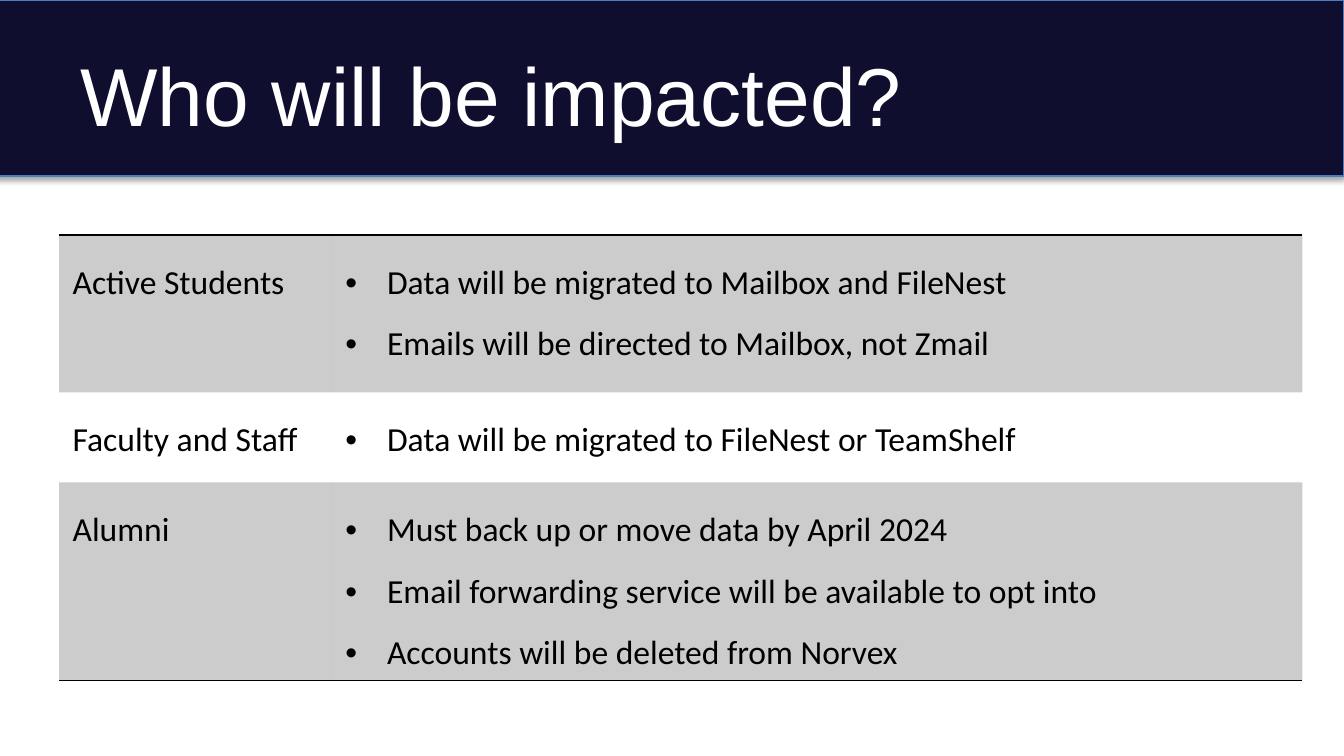
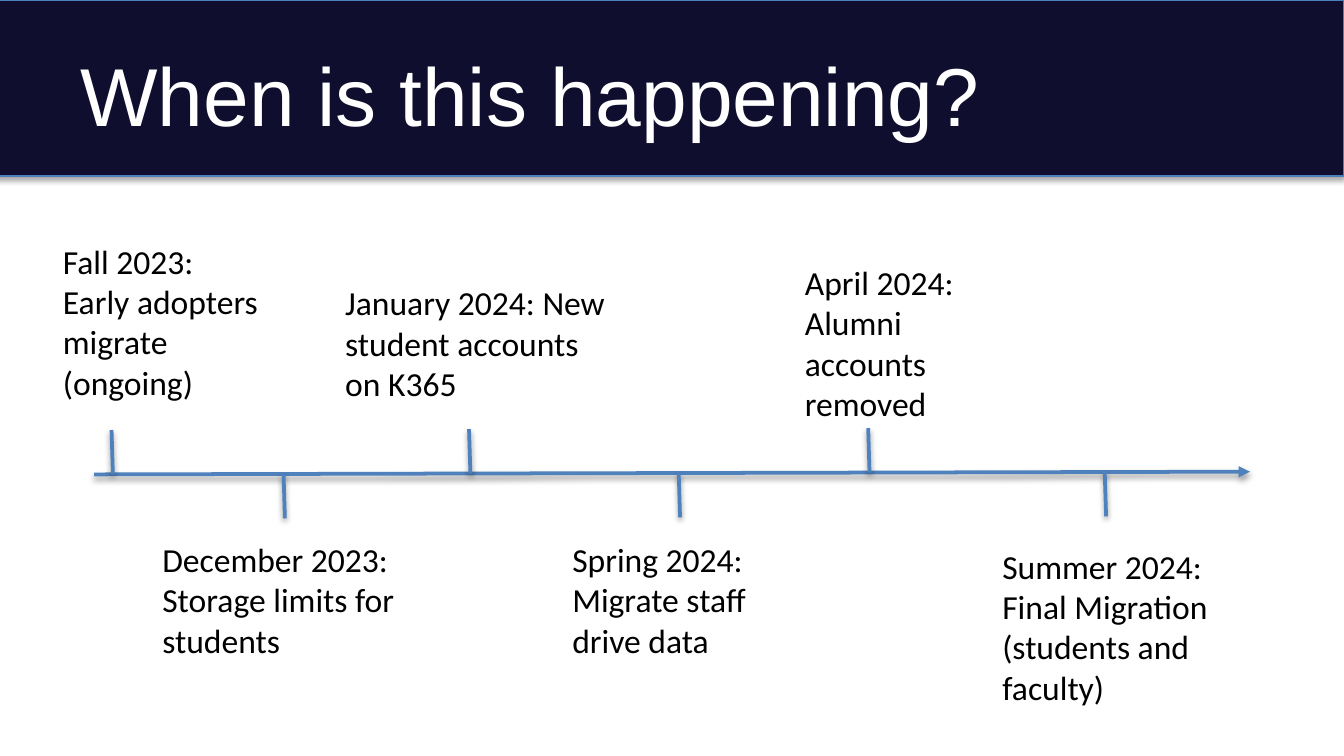
"""Build two slides on a mail and file migration: who is affected and when."""
from dataclasses import dataclass

from lxml.etree import SubElement
from pptx import Presentation
from pptx.dml.color import RGBColor
from pptx.enum.shapes import MSO_CONNECTOR, MSO_SHAPE
from pptx.enum.text import MSO_ANCHOR, MSO_AUTO_SIZE
from pptx.oxml.ns import qn
from pptx.util import Inches, Pt


@dataclass(frozen=True)
class Theme:
    band: str = "100E2F"
    band_line: str = "4B7EBC"
    axis: str = "4F81BD"
    ink: str = "000000"
    paper: str = "FFFFFF"
    title_font: str = "Arial"
    body_font: str = "Calibri"
    title_size: int = 44
    body_size: int = 18


T = Theme()
W = 10
H = W * 9 / 16

GROUPS = [
    ("Active Students", 1.17, ["Data will be migrated to Mailbox and FileNest",
                               "Emails will be directed to Mailbox, not Zmail"]),
    ("Faculty and Staff", 0.67, ["Data will be migrated to FileNest or TeamShelf"]),
    ("Alumni", 1.25, ["Must back up or move data by April 2024",
                      "Email forwarding service will be available to opt into",
                      "Accounts will be deleted from Norvex"]),
]
COLUMNS = (2.03, 7.22)
TABLE_AT = (0.44, 1.75, 9.24, 3.22)
INDENT = 0.31

AXIS = ((0.7, 3.53), (9.3, 3.51))
TICK, LEAN = 0.33, 0.01
LINE_HEIGHT, BOX_PADDING = 0.3, 0.11
MILESTONES = [
    (0.83, -1, (0.37, 1.74, 1.7), 4, ["Fall 2023:", "Early adopters migrate", "(ongoing)"]),
    (2.11, 1, (1.11, 3.96, 2), 3, ["December 2023:", "Storage limits for students"]),
    (3.49, -1, (2.47, 2.05, 2.25), 3, ["January 2024: New student accounts on K365"]),
    (5.05, 1, (4.16, 3.96, 1.99), 3, ["Spring 2024:", "Migrate staff drive data"]),
    (6.46, -1, (5.89, 1.9, 1.69), 4, ["April 2024:", "Alumni accounts removed"]),
    (8.22, 1, (7.36, 4.01, 1.73), 4,
     ["Summer 2024:\nFinal Migration (students and faculty)"]),
]


def rgb(color):
    return RGBColor.from_string(color)


def write(tf, lines, size=T.body_size, font=T.body_font, color=T.ink,
          spacing=None, bullet=False):
    for i, line in enumerate(lines):
        p = tf.add_paragraph() if i else tf.paragraphs[0]
        p.text = line
        if spacing:
            p.line_spacing = spacing
        if bullet:
            pPr = p._p.get_or_add_pPr()
            pPr.set("marL", str(Inches(INDENT)))
            pPr.set("indent", str(-Inches(INDENT)))
            SubElement(pPr, qn("a:buFont"), typeface="Arial")
            SubElement(pPr, qn("a:buChar"), char="•")
        for r in p.runs:
            r.font.size, r.font.name = Pt(size), font
            r.font.color.rgb = rgb(color)


def add_text(slide, box, lines, anchor=MSO_ANCHOR.TOP, grow=False, **style):
    tf = slide.shapes.add_textbox(*map(Inches, box)).text_frame
    tf.word_wrap = True
    tf.vertical_anchor = anchor
    tf.auto_size = MSO_AUTO_SIZE.SHAPE_TO_FIT_TEXT if grow else MSO_AUTO_SIZE.NONE
    write(tf, lines, **style)


def add_color(parent, color, alpha):
    clr = SubElement(parent, qn("a:srgbClr"), val=color)
    SubElement(clr, qn("a:alpha"), val=str(alpha * 1000))


def add_shadow(s, alpha, blur, dist):
    effects = SubElement(s._element.spPr, qn("a:effectLst"))
    shadow = SubElement(effects, qn("a:outerShdw"), blurRad=str(Pt(blur)),
                        dist=str(Pt(dist)), dir="5400000", rotWithShape="0")
    add_color(shadow, T.ink, alpha)


def add_slide(prs, title):
    slide = prs.slides.add_slide(prs.slide_layouts[6])
    band = slide.shapes.add_shape(MSO_SHAPE.RECTANGLE,
                                  *map(Inches, (-0.04, 0, W + 0.04, 1.31)))
    band.fill.solid()
    band.fill.fore_color.rgb = rgb(T.band)
    band.line.color.rgb = rgb(T.band_line)
    band.line.width = Pt(0.75)
    add_shadow(band, 35, 3.1, 1.8)
    add_text(slide, (0.5, 0.23, W - 1, 0.94), [title], anchor=MSO_ANCHOR.MIDDLE,
             size=T.title_size, font=T.title_font, color=T.paper)
    return slide


def add_line(slide, start, end, arrow=False):
    points = map(Inches, (*start, *end))
    line = slide.shapes.add_connector(MSO_CONNECTOR.STRAIGHT, *points)
    line.line.color.rgb = rgb(T.axis)
    line.line.width = Pt(2)
    if arrow:
        SubElement(line.line._get_or_add_ln(), qn("a:tailEnd"), type="triangle")
    add_shadow(line, 38, 3.1, 1.6)


def format_cell(cell, shaded, edge):
    tcPr = cell._tc.get_or_add_tcPr()
    if edge:
        ln = SubElement(tcPr, qn(edge), w=str(Pt(1)))
        fill = SubElement(ln, qn("a:solidFill"))
        SubElement(fill, qn("a:srgbClr"), val=T.ink)
    if shaded:
        add_color(SubElement(tcPr, qn("a:solidFill")), T.ink, 20)
    else:
        SubElement(tcPr, qn("a:noFill"))


def add_groups(slide):
    frame = slide.shapes.add_table(len(GROUPS), len(COLUMNS), *map(Inches, TABLE_AT))
    table = frame.table
    table.first_row = table.horz_banding = False
    style = table._tbl.tblPr.find(qn("a:tableStyleId"))
    style.text = "{2D5ABB26-0587-4C30-8999-92F81FD0307C}"
    for column, width in zip(table.columns, COLUMNS):
        column.width = Inches(width)
    edges = {0: "a:lnT", len(GROUPS) - 1: "a:lnB"}
    for i, (name, height, effects) in enumerate(GROUPS):
        table.rows[i].height = Inches(height)
        for j, lines in enumerate(([name], effects)):
            cell = table.cell(i, j)
            write(cell.text_frame, lines, spacing=1.5, bullet=j == 1)
            format_cell(cell, i % 2 == 0, edges.get(i))
    frame.height = Inches(TABLE_AT[3])


def axis_y(x):
    (x0, y0), (x1, y1) = AXIS
    return y0 + (y1 - y0) * (x - x0) / (x1 - x0)


def add_timeline(slide):
    add_line(slide, *AXIS, arrow=True)
    for x, side, box, rows, lines in MILESTONES:
        y = axis_y(x)
        top, bottom = sorted((y, y + side * TICK))
        add_line(slide, (x, top), (x + LEAN, bottom))
        add_text(slide, (*box, BOX_PADDING + rows * LINE_HEIGHT), lines, grow=True)


def main():
    prs = Presentation()
    prs.slide_width, prs.slide_height = Inches(W), Inches(H)
    add_groups(add_slide(prs, "Who will be impacted?"))
    add_timeline(add_slide(prs, "When is this happening?"))
    prs.save("out.pptx")


if __name__ == "__main__":
    main()
